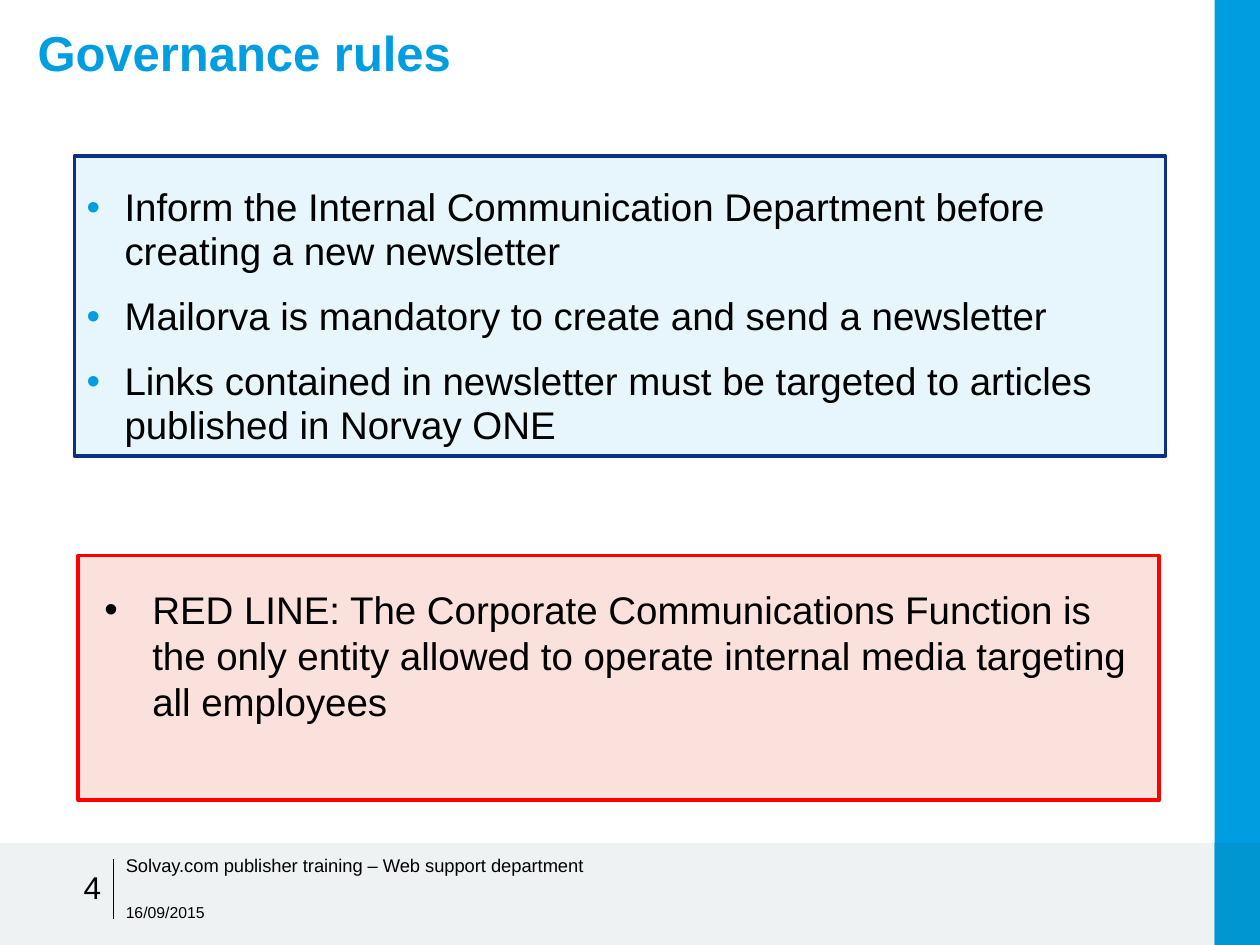
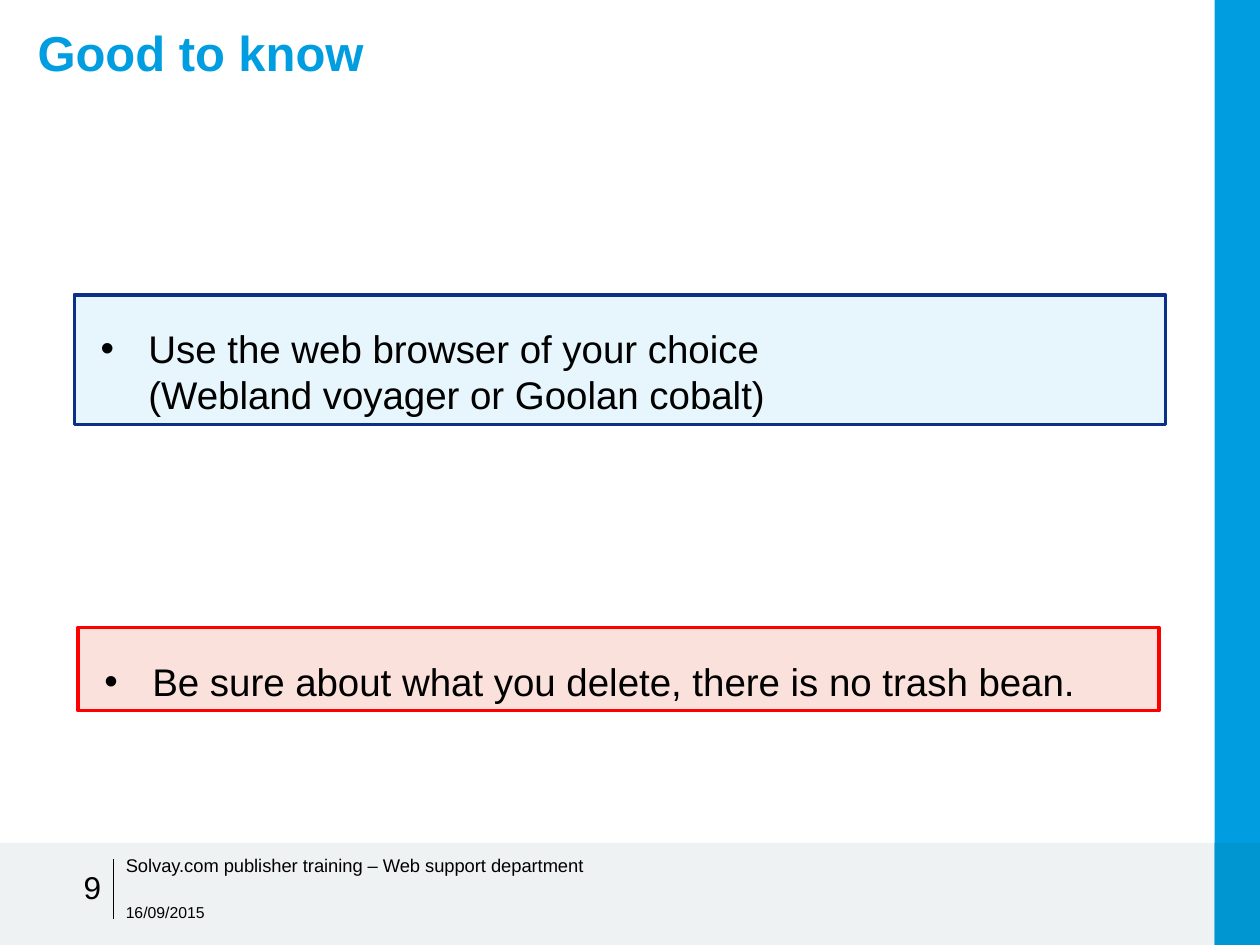
from lxml import etree
from pptx import Presentation
from pptx import util as u
from pptx.dml.color import RGBColor
from pptx.enum import shapes, text
from pptx.oxml import ns

SCALE = 9144  # EMU per px, 100 px to the inch
WIDTH, HEIGHT = 1000, 750
FOOTER_TOP, SIDE_LEFT, RULE_X = 669, 964, 90

BLACK, SKY, SKY_DARK, GREY = "000000", "009EE0", "0096D2", "BDC7C8"
ADVICE = dict(left=59, width=866, fill="E6F6FC", edge="0B3087")
WARNING = dict(left=62, width=858, fill="FBE1DB", edge="FF0000")
WIDE_INDENT = dict(margin=49, hang=38)
TIGHT_INDENT = dict(margin=30, hang=30, bullet_color=SKY, spacing=0.95)


def px(length):
    return u.Emu(length * SCALE)


def rgb(color):
    return RGBColor.from_string(color)


def child(parent, tag, **attributes):
    return etree.SubElement(parent, ns.qn(tag), attributes)


class Deck:
    font = "Arial"

    def __init__(self):
        self.prs = Presentation()
        self.prs.slide_width, self.prs.slide_height = px(WIDTH), px(HEIGHT)
        self.slide = None

    def style(self, paragraph, size, color=BLACK, bold=False):
        font = paragraph.font
        font.name, font.size, font.bold = self.font, u.Pt(size), bold
        font.color.rgb = rgb(color)

    def rect(self, left, top, width, height, fill, edge=None, alpha=None):
        shape = self.slide.shapes.add_shape(
            shapes.MSO_SHAPE.RECTANGLE, *map(px, (left, top, width, height)))
        shape.shadow.inherit = False
        shape.fill.solid()
        shape.fill.fore_color.rgb = rgb(fill)
        if alpha:
            solid = shape.fill._xPr.find(ns.qn("a:solidFill"))
            child(solid[0], "a:alpha", val=str(alpha * 1000))
        if edge:
            shape.line.color.rgb = rgb(edge)
            shape.line.width = u.Pt(2)
        else:
            shape.line.fill.background()
        return shape

    def rule(self, x, top, bottom):
        line = self.slide.shapes.add_connector(
            shapes.MSO_CONNECTOR.STRAIGHT, px(x), px(top), px(x), px(bottom))
        line.line.color.rgb = rgb(BLACK)
        line.line.width = u.Pt(0.75)
        child(line._element.spPr, "a:effectLst")

    def label(self, words, left, top, width, height, size, color=BLACK, bold=False,
              anchor=text.MSO_ANCHOR.TOP, align=text.PP_ALIGN.LEFT, spacing=None):
        box = self.slide.shapes.add_textbox(*map(px, (left, top, width, height)))
        frame = box.text_frame
        frame.word_wrap, frame.vertical_anchor = True, anchor
        paragraph = frame.paragraphs[0]
        paragraph.text, paragraph.alignment = words, align
        paragraph.line_spacing = spacing
        self.style(paragraph, size, color, bold)

    def bullet_box(self, points, top, height, left, width, fill, edge,
                   margin, hang, bullet_color=BLACK, spacing=None):
        frame = self.rect(left, top, width, height, fill, edge).text_frame
        frame.word_wrap, frame.vertical_anchor = True, text.MSO_ANCHOR.TOP
        frame.margin_left = frame.margin_right = px(10)
        frame.margin_top, frame.margin_bottom = px(24), px(5)
        for index, point in enumerate(points):
            paragraph = frame.add_paragraph() if index else frame.paragraphs[0]
            paragraph.text = point
            paragraph.alignment = text.PP_ALIGN.LEFT
            paragraph.line_spacing = spacing
            if index:
                paragraph.space_before = u.Pt(12)
            props = paragraph._p.get_or_add_pPr()
            props.set("marL", str(px(margin)))
            props.set("indent", str(-px(hang)))
            child(child(props, "a:buClr"), "a:srgbClr", val=bullet_color)
            child(props, "a:buFont", typeface=self.font)
            child(props, "a:buChar", char="•")
            self.style(paragraph, 22)

    def new_slide(self, title, number):
        self.slide = self.prs.slides.add_slide(self.prs.slide_layouts[6])
        # Bands
        footer_height = HEIGHT - FOOTER_TOP
        side_width = WIDTH - SIDE_LEFT
        self.rect(0, FOOTER_TOP, WIDTH, footer_height, GREY, alpha=23)
        self.rect(SIDE_LEFT, 0, side_width, HEIGHT, SKY)
        self.rect(SIDE_LEFT, FOOTER_TOP, side_width, footer_height, SKY_DARK)
        self.rule(RULE_X, 682, 729)
        # Title and footer
        middle = text.MSO_ANCHOR.MIDDLE
        self.label(title, 20, 16, 900, 125, 28, SKY, bold=True, spacing=0.95)
        self.label(str(number), 25, 679, 65, 49, 18, anchor=middle,
                   align=text.PP_ALIGN.RIGHT)
        self.label("Solvay.com publisher training – Web support department",
                   RULE_X, 673, 389, 33, 10.5)
        self.label("16/09/2015", RULE_X, 710, 233, 28, 9, anchor=middle)


def main():
    deck = Deck()

    # Governance rules
    deck.new_slide("Governance rules", 4)
    deck.bullet_box(
        ["RED LINE: The Corporate Communications Function is the only entity "
         "allowed to operate internal media targeting all employees"],
        441, 194, **WARNING, **WIDE_INDENT)
    deck.bullet_box(
        ["Inform the Internal Communication Department before creating a new newsletter",
         "Mailorva is mandatory to create and send a newsletter",
         "Links contained in newsletter must be targeted to articles "
         "published in Norvay ONE"],
        124, 238, **ADVICE, **TIGHT_INDENT)

    # Good to know
    deck.new_slide("Good to know", 9)
    deck.bullet_box(["Be sure about what you delete, there is no trash bean."],
                    498, 66, **WARNING, **WIDE_INDENT)
    deck.bullet_box(
        ["Use the web browser of your choice\v(Webland voyager or Goolan cobalt)"],
        234, 103, **ADVICE, **WIDE_INDENT)

    deck.prs.save("out.pptx")


if __name__ == "__main__":
    main()
